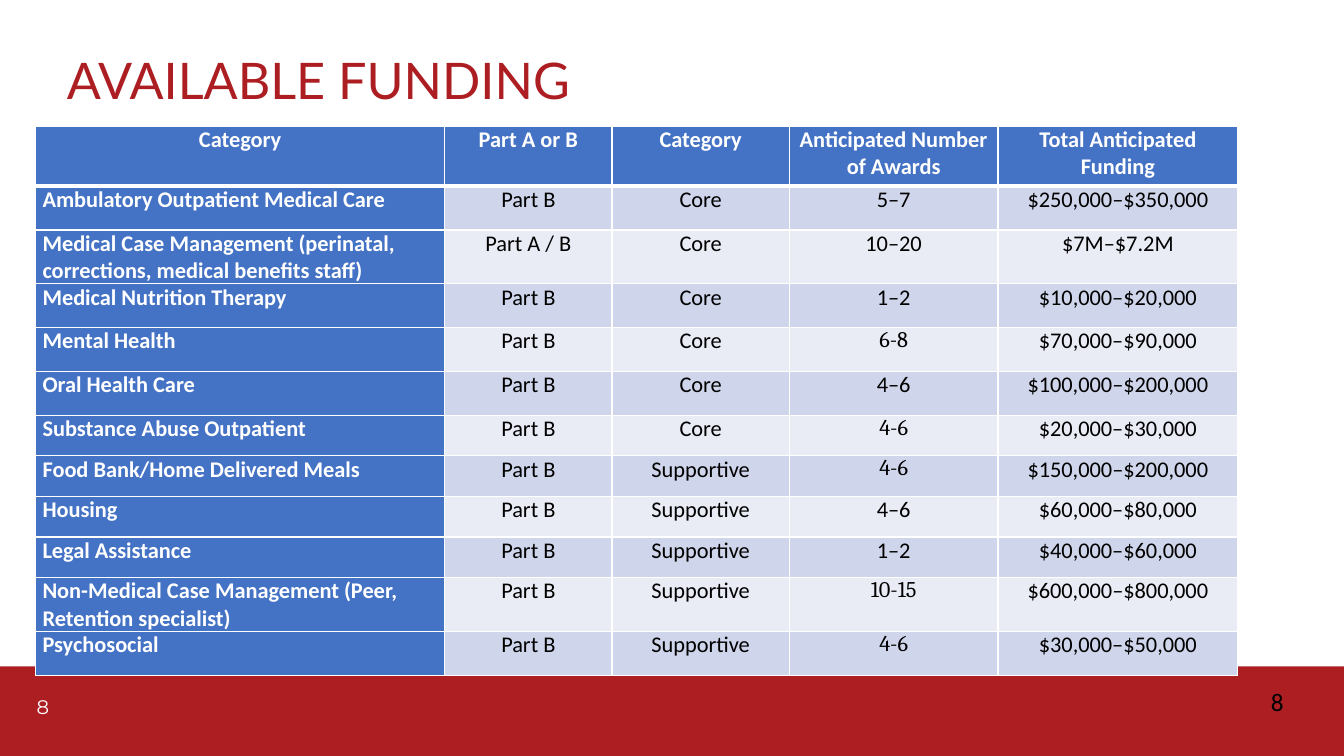
from lxml.etree import SubElement as Sub
from pptx import Presentation
from pptx.dml.color import RGBColor as Rgb
from pptx.enum.shapes import MSO_SHAPE as Shape
from pptx.enum.text import MSO_ANCHOR as Anchor, PP_ALIGN as Align
from pptx.oxml.ns import qn
from pptx.util import Pt

TITLE = "AVAILABLE FUNDING"
PAGE = "8"
HEAD = ("Category", "Part A or B", "Category", "Anticipated Number of Awards",
        "Total Anticipated Funding")
FUNDS = [
    ("Ambulatory Outpatient Medical Care", "Part B", "Core", "5–7", "$250,000–$350,000"),
    ("Medical Case Management (perinatal, corrections, medical benefits staff)",
     "Part A / B", "Core", "10–20", "$7M–$7.2M"),
    ("Medical Nutrition Therapy", "Part B", "Core", "1–2", "$10,000–$20,000"),
    ("Mental Health", "Part B", "Core", "6-8", "$70,000–$90,000"),
    ("Oral Health Care", "Part B", "Core", "4–6", "$100,000–$200,000"),
    ("Substance Abuse Outpatient", "Part B", "Core", "4-6", "$20,000–$30,000"),
    ("Food Bank/Home Delivered Meals", "Part B", "Supportive", "4-6", "$150,000–$200,000"),
    ("Housing", "Part B", "Supportive", "4–6", "$60,000–$80,000"),
    ("Legal Assistance", "Part B", "Supportive", "1–2", "$40,000–$60,000"),
    ("Non-Medical Case Management (Peer, Retention specialist)",
     "Part B", "Supportive", "10-15", "$600,000–$800,000"),
    ("Psychosocial", "Part B", "Supportive", "4-6", "$30,000–$50,000"),
]
WIDTHS = (292.3, 119.5, 126.7, 149, 171.4)
HEIGHTS = [43] + [31.3] * 5 + [29] * 4 + [31.3] * 2
RED, BLUE, WHITE, BLACK = "AD1E23", "4472C4", "FFFFFF", "000000"
BANDS = ("E9EBF5", "CFD5EA")


def paint(fill, tone):
    fill.solid()
    fill.fore_color.rgb = Rgb.from_string(tone)


def write(para, text, face, size, tone, bold=False):
    run = para.add_run()
    run.text = text
    font = run.font
    font.name, font.size, font.bold = face, Pt(size), bold
    paint(font.fill, tone)


def edge(cell, side, width):
    line = Sub(cell._tc.get_or_add_tcPr(), qn("a:" + side), w=str(Pt(width)))
    Sub(Sub(line, qn("a:solidFill")), qn("a:srgbClr"), val=WHITE)


def number(slide, box, face, size, tone):
    frame = slide.shapes.add_textbox(*map(Pt, box)).text_frame
    frame.word_wrap = True
    write(frame.paragraphs[0], PAGE, face, size, tone)


def fill_cell(cell, text, row, col):
    label = row == 0 or col == 0
    for side in ("lnL", "lnR", "lnT", "lnB"):
        thick = (row, side) in ((0, "lnB"), (1, "lnT"))
        edge(cell, side, 3 if thick else 1)
    paint(cell.fill, BLUE if label else BANDS[row % 2])
    cell.margin_left = cell.margin_right = Pt(5)
    cell.margin_top = cell.margin_bottom = 0
    para = cell.text_frame.paragraphs[0]
    para.alignment = Align.LEFT if row and not col else Align.CENTER
    face = "Cambria" if col == 3 and "-" in text else "Calibri"
    write(para, text, face, 16, WHITE if label else BLACK, label)


def add_funds(slide):
    rows = [HEAD, *FUNDS]
    grid = slide.shapes.add_table(
        len(rows), len(HEAD), Pt(25.4), Pt(90), Pt(sum(WIDTHS)), Pt(sum(HEIGHTS))).table
    for col, width in zip(grid.columns, WIDTHS):
        col.width = Pt(width)
    for r, (row, high) in enumerate(zip(rows, HEIGHTS)):
        grid.rows[r].height = Pt(high)
        for c, text in enumerate(row):
            fill_cell(grid.cell(r, c), text, r, c)


def main():
    deck = Presentation()
    deck.slide_width, deck.slide_height = Pt(960), Pt(540)
    slide = deck.slides.add_slide(deck.slide_layouts[5])

    band = slide.shapes.add_shape(Shape.RECTANGLE, 0, Pt(476), Pt(960), Pt(64))
    band.shadow.inherit = False
    paint(band.fill, RED)
    band.line.fill.background()
    number(slide, (19.1, 493, 47.5, 29), "Montserrat", 14, WHITE)

    title = slide.shapes.title
    title.left, title.top, title.width, title.height = map(Pt, (40.5, 28.8, 828, 61.2))
    title.text_frame.vertical_anchor = Anchor.MIDDLE
    para = title.text_frame.paragraphs[0]
    para.alignment, para.line_spacing = Align.LEFT, 0.9
    write(para, TITLE, "Lato", 36, RED)

    number(slide, (900.7, 486.7, 24.5, 29), "Calibri", 18, BLACK)
    add_funds(slide)
    deck.save("out.pptx")


if __name__ == "__main__":
    main()
